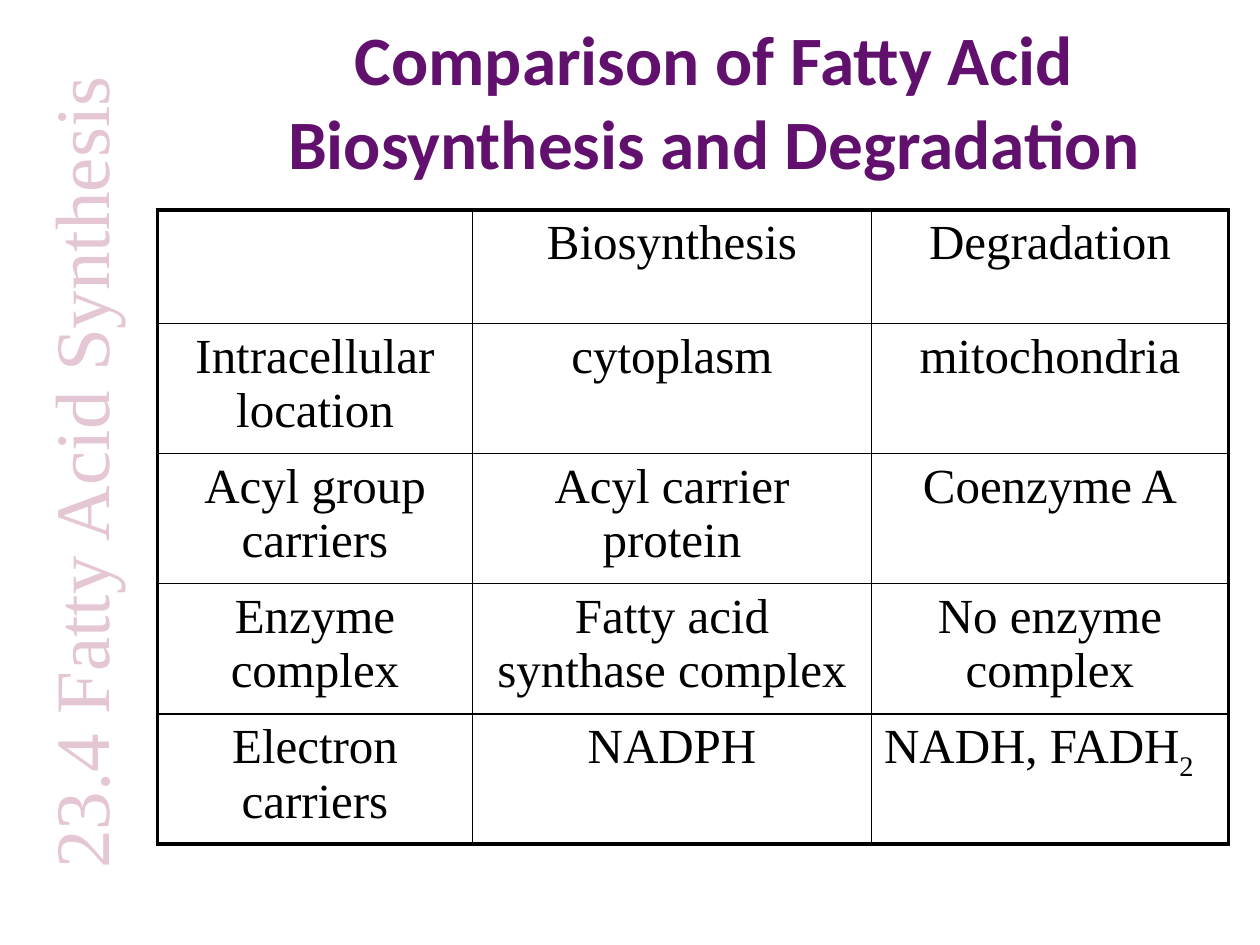
from lxml import etree
from pptx import Presentation
from pptx import util as u
from pptx.dml.color import RGBColor
from pptx.enum import text
from pptx.oxml.ns import qn

COLORS = {"title": "61116D", "chapter": "E5C6D4", "ink": "000000", "paper": "FFFFFF"}
ALIGN = text.PP_ALIGN


def write(paragraph, words, font="Times New Roman", size=28, color="ink",
          bold=False, align=ALIGN.CENTER, baseline=None):
    paragraph.alignment = align
    run = paragraph.add_run()
    run.text = words
    run.font.name = font
    run.font.size = u.Pt(size)
    run.font.bold = bold
    run.font.color.rgb = RGBColor.from_string(COLORS[color])
    if baseline is not None:
        run.font._element.set("baseline", str(baseline * 1000))


def draw_border(cell, side, width):
    line = etree.Element(qn(f"a:ln{side}"), w=str(u.Pt(width)))
    fill = etree.SubElement(line, qn("a:solidFill"))
    etree.SubElement(fill, qn("a:srgbClr"), val=COLORS["ink"])
    return line


class SlideBuilder:
    outer, inner = 2.25, 1

    def __init__(self, deck):
        self.slide = deck.slides.add_slide(deck.slide_layouts[5])

    def place(self, shape, left, top, width, height):
        shape.left, shape.top = u.Pt(left), u.Pt(top)
        shape.width, shape.height = u.Pt(width), u.Pt(height)

    def title(self, words, box):
        heading = self.slide.shapes.title
        self.place(heading, *box)
        frame = heading.text_frame
        frame.word_wrap = True
        frame.auto_size = text.MSO_AUTO_SIZE.NONE
        frame.vertical_anchor = text.MSO_ANCHOR.MIDDLE
        write(frame.paragraphs[0], words, font="Calibri", size=39.6,
              color="title", bold=True)

    def side_label(self, words, box):
        label = self.slide.shapes.add_textbox(*map(u.Pt, box))
        label.rotation = 270
        frame = label.text_frame
        frame.word_wrap = True
        frame.vertical_anchor = text.MSO_ANCHOR.MIDDLE
        write(frame.paragraphs[0], words, size=44, color="chapter")

    def table(self, rows, left, top, widths, heights):
        box = map(u.Pt, (left, top, sum(widths), sum(heights)))
        grid = self.slide.shapes.add_table(len(heights), len(widths), *box).table
        grid.first_row = grid.horz_banding = False
        for column, width in zip(grid.columns, widths):
            column.width = u.Pt(width)
        for row, height in zip(grid.rows, heights):
            row.height = u.Pt(height)
        last_row, last_column = len(heights) - 1, len(widths) - 1
        for r, entries in enumerate(rows):
            for c, words in enumerate(entries):
                cell = grid.cell(r, c)
                cell.fill.solid()
                cell.fill.fore_color.rgb = RGBColor.from_string(COLORS["paper"])
                edges = {"L": c == 0, "R": c == last_column,
                         "T": r == 0, "B": r == last_row}
                properties = cell._tc.get_or_add_tcPr()
                for position, (side, is_outer) in enumerate(edges.items()):
                    width = self.outer if is_outer else self.inner
                    properties.insert(position, draw_border(cell, side, width))
                if words:
                    write(cell.text_frame.paragraphs[0], words)
        return grid


def main():
    deck = Presentation()
    deck.slide_width, deck.slide_height = u.Pt(720), u.Pt(540)
    builder = SlideBuilder(deck)
    builder.title("Comparison of Fatty Acid Biosynthesis and Degradation",
                  (102, 12, 612, 90))
    comparison = [
        ("", "Biosynthesis", "Degradation"),
        ("Intracellular location", "cytoplasm", "mitochondria"),
        ("Acyl group carriers", "Acyl carrier protein", "Coenzyme A"),
        ("Enzyme complex", "Fatty acid synthase complex", "No enzyme complex"),
        ("Electron carriers", "NADPH", ""),
    ]
    pathways = builder.table(comparison, 90, 120, (180, 228, 204),
                             [64.8] + [74.4] * 4)
    carriers = pathways.cell(4, 2).text_frame.paragraphs[0]
    write(carriers, "NADH, FADH", align=ALIGN.LEFT)
    write(carriers, "2", align=ALIGN.LEFT, baseline=-25)
    builder.side_label("23.4 Fatty Acid Synthesis", (-213, 231, 516, 78))
    deck.save("out.pptx")


if __name__ == "__main__":
    main()
